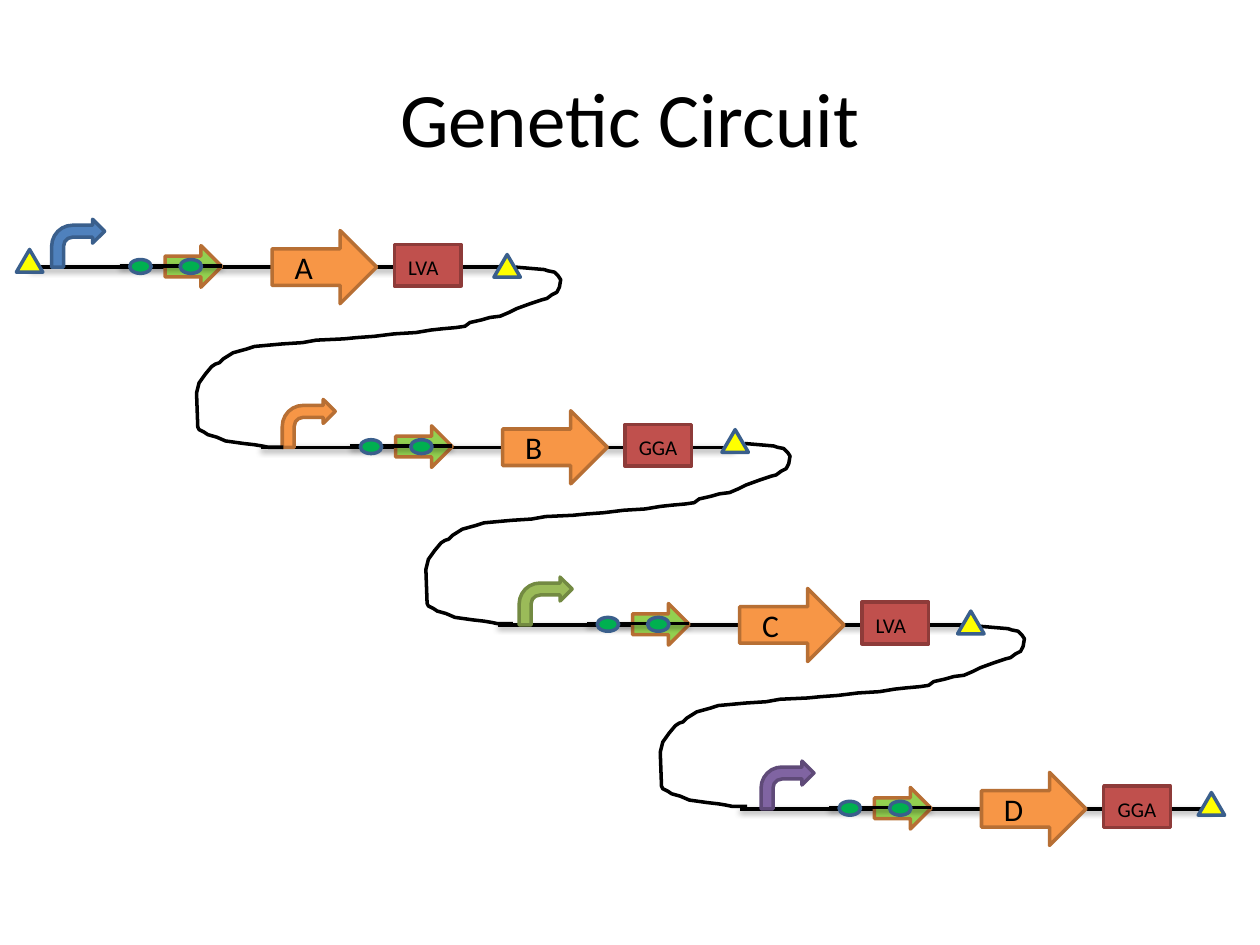
"""Build the Genetic Circuit slide: four gene units joined by curved strands."""
import pptx
import pptx.dml.color
import pptx.enum.shapes
import pptx.enum.text
import pptx.oxml
import pptx.oxml.ns
import pptx.util

Inches = pptx.util.Inches
RGBColor = pptx.dml.color.RGBColor
SHAPE = pptx.enum.shapes.MSO_SHAPE
ANCHOR = pptx.enum.text.MSO_ANCHOR
ALIGN = pptx.enum.text.PP_ALIGN

BLACK = RGBColor(0x00, 0x00, 0x00)
BLUE = RGBColor(0x4F, 0x81, 0xBD)
DARK_BLUE = RGBColor(0x3A, 0x5F, 0x8C)
ORANGE = RGBColor(0xF7, 0x96, 0x46)
DARK_ORANGE = RGBColor(0xB7, 0x6F, 0x34)
OLIVE = RGBColor(0x9B, 0xBB, 0x59)
DARK_OLIVE = RGBColor(0x73, 0x8A, 0x42)
PURPLE = RGBColor(0x80, 0x64, 0xA2)
DARK_PURPLE = RGBColor(0x5F, 0x4A, 0x78)
RED = RGBColor(0xC0, 0x50, 0x4D)
DARK_RED = RGBColor(0x8E, 0x3B, 0x39)
LIME = RGBColor(0x92, 0xD0, 0x50)
GREEN = RGBColor(0x00, 0xB0, 0x50)
YELLOW = RGBColor(0xFF, 0xFF, 0x00)

SHADOW = (
    f'<a:effectLst {pptx.oxml.ns.nsdecls("a")}>'
    '<a:outerShdw blurRad="40000" dist="20000" dir="5400000" rotWithShape="0">'
    '<a:srgbClr val="000000"><a:alpha val="38000"/></a:srgbClr>'
    '</a:outerShdw></a:effectLst>'
)

UNITS = [
    (0.24, 2.12, "A", "LVA", BLUE, DARK_BLUE),
    (2.07, 3.55, "B", "GGA", ORANGE, DARK_ORANGE),
    (3.95, 4.96, "C", "LVA", OLIVE, DARK_OLIVE),
    (5.87, 6.42, "D", "GGA", PURPLE, DARK_PURPLE),
]
STRAND = [
    (4.09, 2.12), (4.32, 2.14), (4.35, 2.15), (4.4, 2.16), (4.43, 2.19),
    (4.45, 2.22), (4.44, 2.28), (4.42, 2.32), (4.38, 2.34), (4.34, 2.37),
    (4.3, 2.38), (4.24, 2.4), (4.21, 2.41), (4.1, 2.45), (4.04, 2.48),
    (3.97, 2.51), (3.89, 2.52), (3.82, 2.54), (3.73, 2.56), (3.69, 2.59),
    (3.62, 2.6), (3.51, 2.61), (3.42, 2.62), (3.3, 2.64), (3.13, 2.65),
    (2.97, 2.67), (2.83, 2.68), (2.73, 2.69), (2.51, 2.7), (2.4, 2.72),
    (2.24, 2.73), (2.02, 2.75), (1.96, 2.77), (1.85, 2.8), (1.77, 2.85),
    (1.74, 2.88), (1.71, 2.89), (1.68, 2.91), (1.63, 2.97), (1.58, 3.04),
    (1.56, 3.12), (1.57, 3.39), (1.58, 3.41), (1.62, 3.43), (1.65, 3.45),
    (1.72, 3.47), (1.79, 3.5), (1.86, 3.51), (1.93, 3.52), (2.02, 3.53),
    (2.08, 3.54), (2.13, 3.55), (2.25, 3.55),
]
STRAND_SHIFTS = [(0, 0), (1.82, 1.4), (3.68, 2.85)]
SITES = [(0.13, 1.98), (3.92, 2.02), (5.73, 3.41), (7.6, 4.85), (9.51, 6.29)]


def write_text(tf, text, size=18, font="Calibri", color=BLACK, align=ALIGN.LEFT,
               anchor=ANCHOR.TOP, left=0.1, right=0.1, bottom=0.05):
    tf.word_wrap = True
    tf.vertical_anchor = anchor
    tf.margin_left, tf.margin_right = Inches(left), Inches(right)
    tf.margin_bottom = Inches(bottom)
    p = tf.paragraphs[0]
    p.alignment = align
    r = p.add_run()
    r.text = text
    r.font.name = font
    r.font.size = pptx.util.Pt(size)
    r.font.color.rgb = color


class Circuit:
    def __init__(self, slide, line_width=2):
        self.shapes = slide.shapes
        self.line_width = pptx.util.Pt(line_width)

    def outline(self, sp, color):
        sp.line.color.rgb = color
        sp.line.width = self.line_width

    def shape(self, kind, x, y, w, h, fill, line, parent=None):
        sp = (parent or self.shapes).add_shape(
            kind, Inches(x), Inches(y), Inches(w), Inches(h))
        sp.shadow.inherit = False
        sp.fill.solid()
        sp.fill.fore_color.rgb = fill
        self.outline(sp, line)

    def text(self, text, x, y, w, h, parent=None, **style):
        sp = (parent or self.shapes).add_textbox(
            Inches(x), Inches(y), Inches(w), Inches(h))
        write_text(sp.text_frame, text, **style)

    def dna(self, x, y, length, parent=None):
        sp = (parent or self.shapes).add_connector(
            pptx.enum.shapes.MSO_CONNECTOR.STRAIGHT,
            Inches(x), Inches(y), Inches(x + length), Inches(y))
        self.outline(sp, BLACK)
        sp._element.spPr.append(pptx.oxml.parse_xml(SHADOW))

    def strand(self, dx, dy):
        points = [(Inches(x + dx), Inches(y + dy)) for x, y in STRAND]
        builder = self.shapes.build_freeform(*points[0])
        builder.add_line_segments(points[1:], close=False)
        sp = builder.convert_to_shape()
        sp.shadow.inherit = False
        sp.fill.background()
        self.outline(sp, BLACK)

    def unit(self, x, y, gene, tag, fill, line):
        self.dna(x, y, 3.75)
        self.shape(SHAPE.RIGHT_ARROW, x + 1.92, y - 0.29, 0.83, 0.58, ORANGE, DARK_ORANGE)
        self.text(gene, x + 2, y - 0.2, 0.33, 0.4)
        self.shape(SHAPE.BENT_ARROW, x + 0.17, y - 0.38, 0.42, 0.38, fill, line)

        lock = self.shapes.add_group_shape().shapes
        self.shape(SHAPE.RIGHT_ARROW, x + 1.07, y - 0.17, 0.45, 0.33, LIME, DARK_ORANGE, lock)
        self.dna(x + 0.71, y - 0.01, 0.81, lock)
        for dx in (1.19, 0.79):
            self.shape(SHAPE.OVAL, x + dx, y - 0.06, 0.17, 0.11, GREEN, DARK_BLUE, lock)

        tail = self.shapes.add_group_shape().shapes
        self.shape(SHAPE.RECTANGLE, x + 2.89, y - 0.18, 0.53, 0.33, RED, DARK_RED, tail)
        self.text(tag, x + 2.75, y - 0.47, 0.67, 0.64, tail, size=12,
                  anchor=ANCHOR.BOTTOM, left=0.25, right=0, bottom=0.07)


def main():
    prs = pptx.Presentation()
    prs.slide_width, prs.slide_height = Inches(10), Inches(7.5)
    circuit = Circuit(prs.slides.add_slide(prs.slide_layouts[6]))
    circuit.text("Genetic Circuit", 0.5, 0.3, 9, 1.25, size=44,
                 align=ALIGN.CENTER, anchor=ANCHOR.MIDDLE)
    for unit in UNITS:
        circuit.unit(*unit)
    for shift in STRAND_SHIFTS:
        circuit.strand(*shift)
    for x, y in SITES:
        circuit.shape(SHAPE.ISOSCELES_TRIANGLE, x, y, 0.21, 0.18, YELLOW, DARK_BLUE)
    prs.save("out.pptx")


if __name__ == "__main__":
    main()
